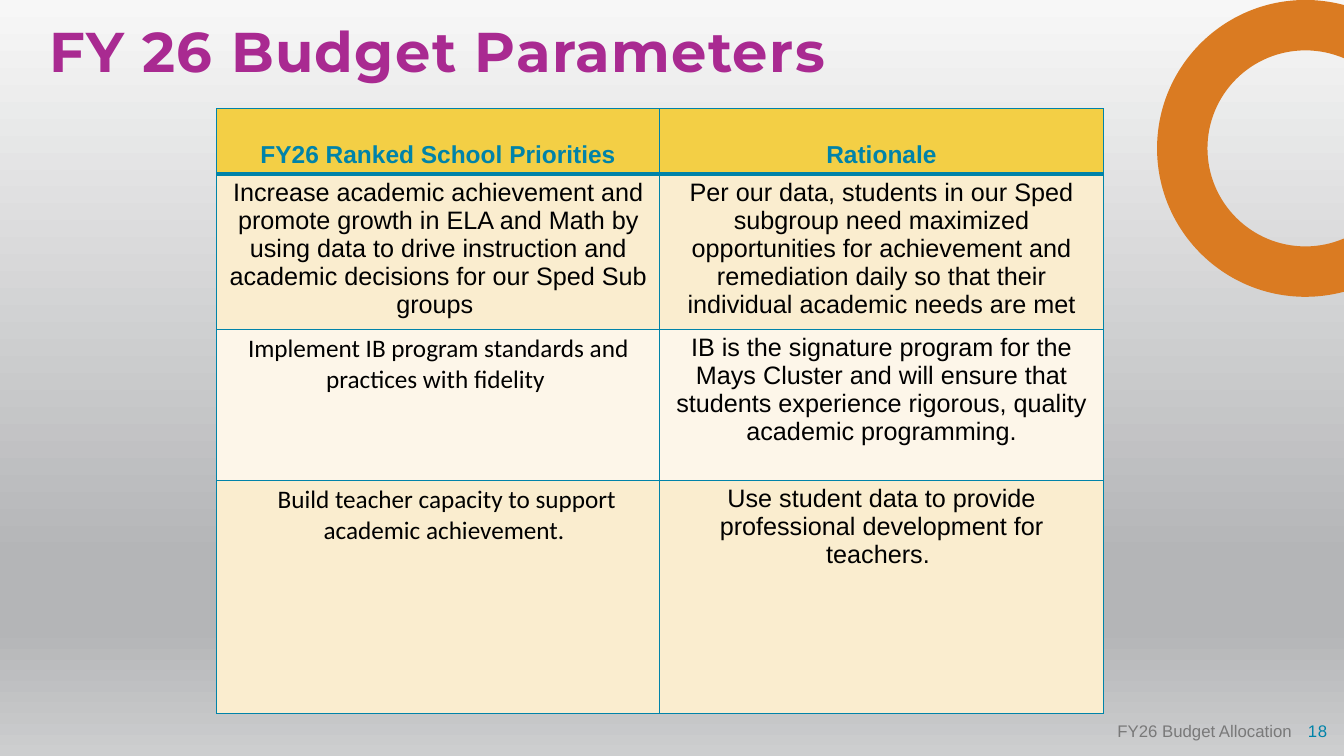
from dataclasses import dataclass
from math import acos, cos, pi, sin, tan

from lxml.etree import SubElement
from pptx import Presentation
from pptx.dml.color import RGBColor as Color
from pptx.enum.text import MSO_ANCHOR as Anchor, PP_ALIGN as Align
from pptx.oxml.ns import qn
from pptx.util import Cm, Pt


@dataclass(frozen=True)
class Theme:
    """Colours, fonts and type sizes of the slide."""
    backdrop: tuple = ((0, "F7F7F7"), (74, "B4B5B7"), (83, "B4B5B7"), (100, "CDCECF"))
    heading: str = "A92A91"
    teal: str = "0083A9"
    ring: str = "DA7B22"
    header: str = "F3CF45"
    bands: tuple = ("FAEDCF", "FDF6E9")
    ink: str = "000000"
    grey: str = "797979"
    display: str = "Montserrat"
    body: str = "Arial"
    alternate: str = "Calibri"
    title_size: float = 40
    header_size: float = 17.5
    body_size: float = 18
    footer_size: float = 12


WIDTH, HEIGHT = 33.87, 19.05
HEADERS = ("FY26 Ranked School Priorities", "Rationale")
PRIORITIES = (
    ("Increase academic achievement and promote growth in ELA and Math by using "
     "data to drive instruction and academic decisions for our Sped Sub groups ",
     "Per our data, students in our Sped subgroup need maximized opportunities for "
     "achievement and remediation daily so that their individual academic needs are met"),
    ("Implement IB program standards and practices with fidelity ",
     "IB is the signature program for the Mays Cluster and will ensure that students "
     "experience rigorous, quality academic programming."),
    ("Build teacher capacity to support academic achievement. ",
     "Use student data to provide professional development for teachers. "),
)


def write(frame, text, font, size, color, bold=False, align=Align.LEFT,
          tracking=0, spacing=None, indent=0):
    """Put one formatted paragraph into a text frame."""
    para = frame.paragraphs[0]
    para.alignment = align
    if spacing:
        para.line_spacing = spacing
    if indent:
        para._p.get_or_add_pPr().set("marL", str(Cm(indent)))
    span = para.add_run()
    span.text = text
    span.font.name, span.font.size, span.font.bold = font, Pt(size), bold
    span.font.color.rgb = Color.from_string(color)
    if tracking:
        span.font._element.set("spc", str(int(tracking * 100)))


class SlideBuilder:
    """Draws styled elements on the current slide."""

    def __init__(self, page, theme):
        self.page = page
        self.theme = theme

    def background(self):
        """Fill the page with a vertical gradient."""
        fill = self.page.background.fill
        fill.gradient()
        fill.gradient_angle = 270
        stops = self.page.element.xpath(".//a:gsLst")[0]
        stops.clear()
        for position, color in self.theme.backdrop:
            stop = SubElement(stops, qn("a:gs"), pos=str(position * 1000))
            SubElement(stop, qn("a:srgbClr"), val=color)

    def ring(self, x, y, outer, inner):
        """Draw a ring cut off by the right edge of the page."""
        nodes = []
        for radius, direction in ((outer, 1), (inner, -1)):
            start = acos((WIDTH - x) / radius)
            angles = (start, pi / 2, pi, 3 * pi / 2, 2 * pi - start)
            nodes += [(radius, angle) for angle in angles[::direction]]
        points = [(Cm(x + r * cos(a)), Cm(y + r * sin(a))) for r, a in nodes]
        builder = self.page.shapes.build_freeform(*points[0])
        builder.add_line_segments(points[1:], close=True)
        shape = builder.convert_to_shape()
        shape.shadow.inherit = False
        shape.fill.solid()
        shape.fill.fore_color.rgb = Color.from_string(self.theme.ring)
        shape.line.fill.background()
        lines = shape._element.xpath(".//a:lnTo")
        for line, (radius, a), (next_radius, b) in zip(lines, nodes, nodes[1:]):
            if radius != next_radius:
                continue
            reach = 4 / 3 * tan((b - a) / 4)
            controls = ((cos(a) - reach * sin(a), sin(a) + reach * cos(a)),
                        (cos(b) + reach * sin(b), sin(b) - reach * cos(b)),
                        (cos(b), sin(b)))
            curve = line.makeelement(qn("a:cubicBezTo"))
            for u, v in controls:
                SubElement(curve, qn("a:pt"), x=str(Cm(x + radius * u) - shape.left),
                           y=str(Cm(y + radius * v) - shape.top))
            line.getparent().replace(line, curve)

    def text(self, x, y, width, height, text, anchor=Anchor.TOP, inset=0.0, **style):
        """Add a text box with one paragraph."""
        box = self.page.shapes.add_textbox(Cm(x), Cm(y), Cm(width), Cm(height))
        frame = box.text_frame
        frame.word_wrap = True
        frame.vertical_anchor = anchor
        frame.margin_left = frame.margin_right = Cm(inset)
        frame.margin_top = frame.margin_bottom = 0
        write(frame, text, **style)

    def border(self, cell, bottom=1, top=1):
        """Outline a cell in teal."""
        props = cell._tc.get_or_add_tcPr()
        edges = (("a:lnL", 1), ("a:lnR", 1), ("a:lnT", top), ("a:lnB", bottom))
        for index, (edge, weight) in enumerate(edges):
            line = props.makeelement(qn(edge), {"w": str(Pt(weight))})
            props.insert(index, line)
            solid = SubElement(line, qn("a:solidFill"))
            SubElement(solid, qn("a:srgbClr"), val=self.theme.teal)

    def cell(self, cell, text, fill, anchor=Anchor.TOP, bottom=1, top=1, **style):
        """Fill, outline and label one table cell."""
        cell.fill.solid()
        cell.fill.fore_color.rgb = Color.from_string(fill)
        cell.vertical_anchor = anchor
        if anchor == Anchor.TOP:
            cell.margin_top, cell.margin_bottom = Cm(0.1), 0
        self.border(cell, bottom, top)
        write(cell.text_frame, text, align=Align.CENTER, **style)

    def table(self, x, y, column, heights):
        """Add the table of priorities and their rationale."""
        theme = self.theme
        table = self.page.shapes.add_table(
            len(heights), len(HEADERS), Cm(x), Cm(y),
            Cm(column * len(HEADERS)), Cm(sum(heights))).table
        for row, height in zip(table.rows, heights):
            row.height = Cm(height)
        for c, label in enumerate(HEADERS):
            self.cell(table.cell(0, c), label, theme.header, Anchor.BOTTOM, bottom=3,
                      font=theme.body, size=theme.header_size, color=theme.teal, bold=True)
        last = len(PRIORITIES)
        for r, texts in enumerate(PRIORITIES, 1):
            for c, text in enumerate(texts):
                self.cell(table.cell(r, c), text, theme.bands[(r - 1) % 2],
                          top=3 if r == 1 else 1,
                          font=theme.alternate if r > 1 and c == 0 else theme.body,
                          size=theme.body_size, color=theme.ink,
                          indent=0.43 if r == last and c == 0 else 0)


def main():
    """Build and save the deck."""
    theme = Theme()
    deck = Presentation()
    deck.slide_width, deck.slide_height = Cm(WIDTH), Cm(HEIGHT)
    slide = SlideBuilder(deck.slides.add_slide(deck.slide_layouts[6]), theme)
    slide.background()
    slide.ring(32.9, 3.74, 3.74, 2.47)
    slide.text(1.24, 0.6, 21.56, 1.9, "FY 26 Budget Parameters", font=theme.display,
               size=theme.title_size, color=theme.heading, bold=True,
               tracking=1, spacing=0.9)
    slide.table(5.46, 2.74, 11.17, (1.65, 3.81, 3.81, 5.87))
    footer = dict(anchor=Anchor.MIDDLE, align=Align.RIGHT, font=theme.body,
                  size=theme.footer_size)
    slide.text(25.83, 17.91, 7.62, 1.02, "18", color=theme.teal, tracking=0.5, **footer)
    slide.text(27.4, 17.91, 5.41, 1.02, "FY26 Budget Allocation", inset=0.25,
               color=theme.grey, **footer)
    deck.save("out.pptx")


if __name__ == "__main__":
    main()
